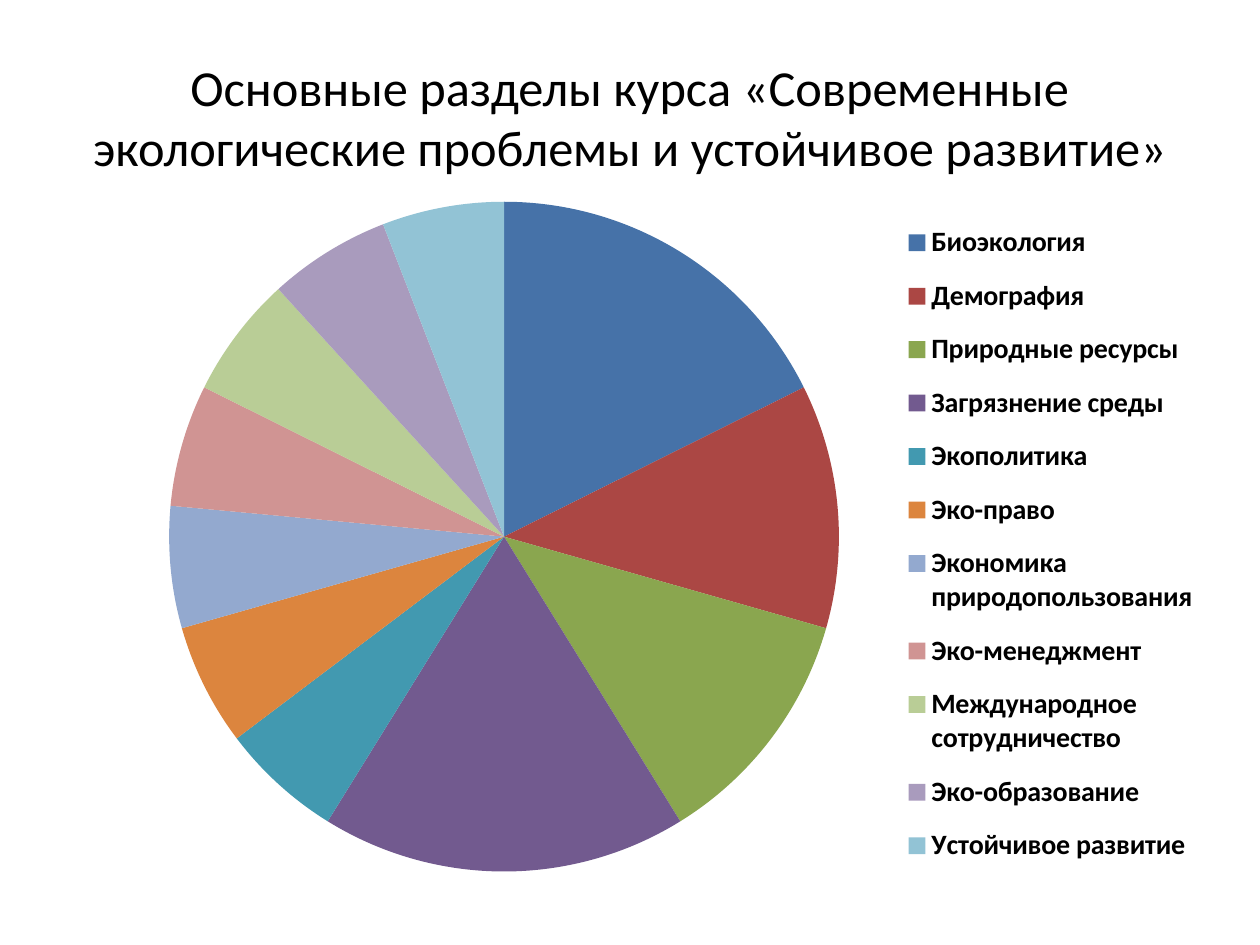
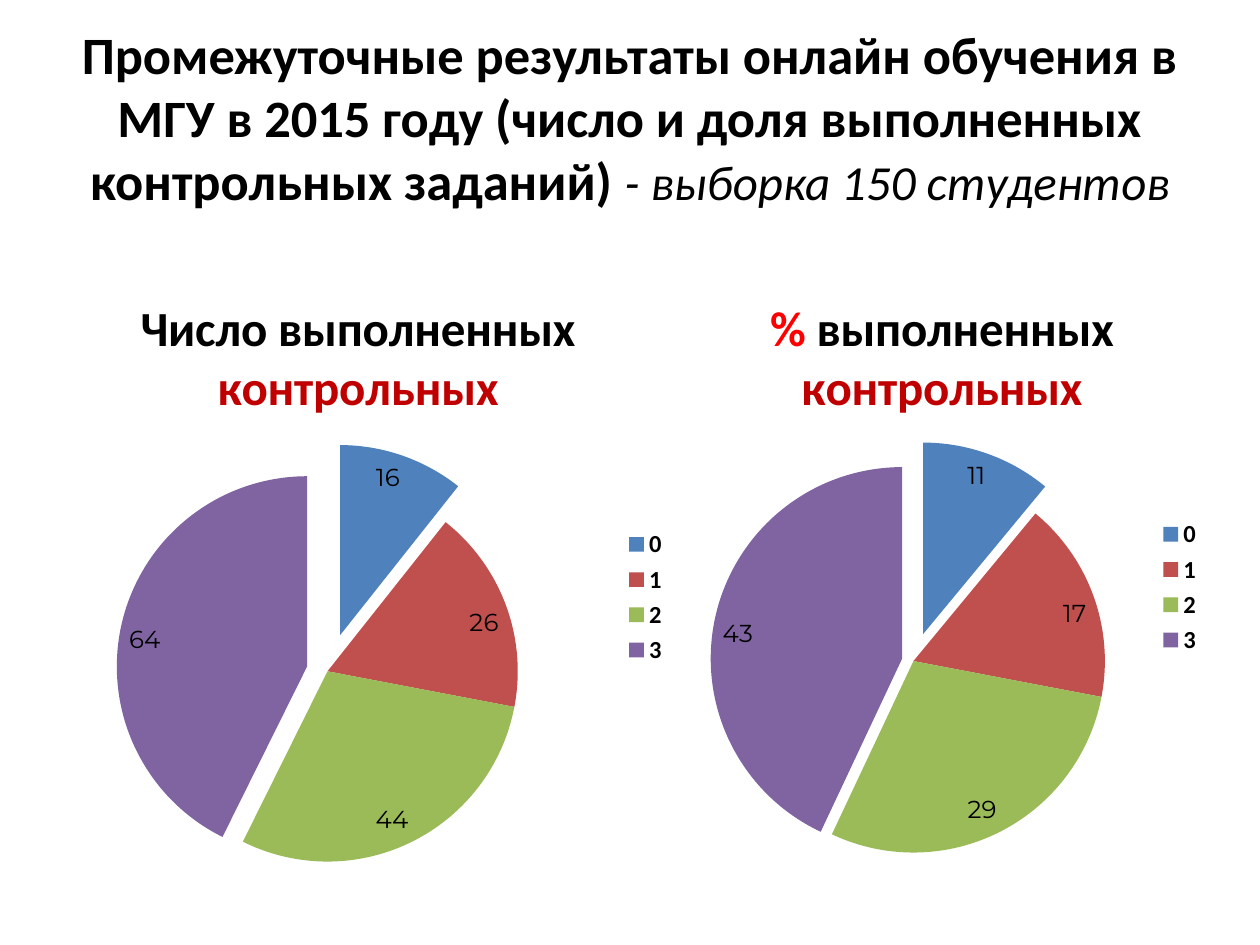
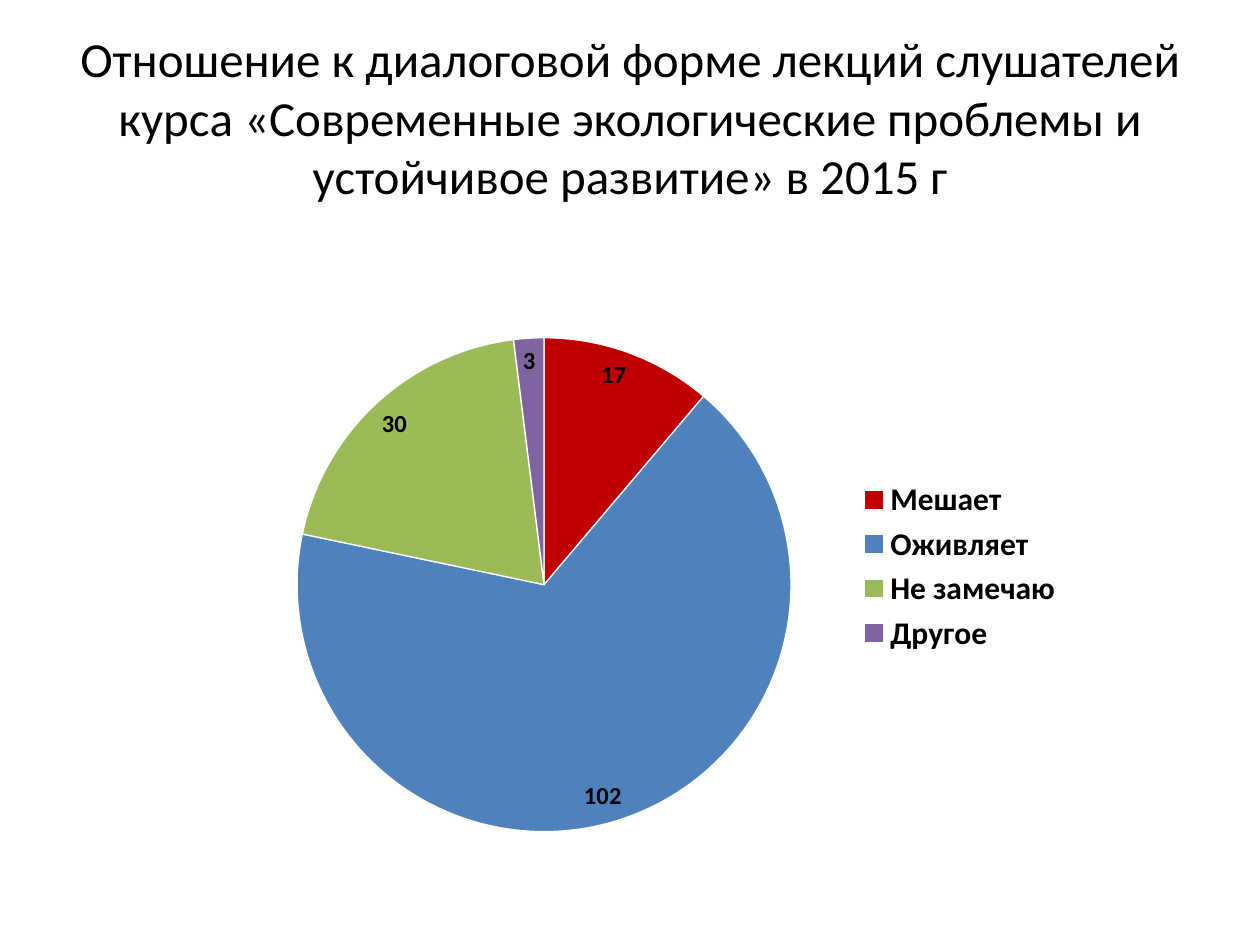
from lxml.etree import SubElement
from pptx import Presentation
from pptx.chart.data import CategoryChartData
from pptx.dml.color import RGBColor
from pptx.enum.chart import XL_CHART_TYPE, XL_LABEL_POSITION, XL_LEGEND_POSITION
from pptx.enum.text import MSO_ANCHOR, PP_ALIGN
from pptx.oxml.ns import qn
from pptx.util import Inches, Pt

HEX = {
    "black": "000000", "white": "FFFFFF", "red": "FF0000", "crimson": "C00000",
    "blue": "4F81BD", "brick": "C0504D", "green": "9BBB59", "violet": "8064A2",
}
WHEEL = ["4672A8", "AB4744", "8AA64F", "725A8F", "4299B0", "DC853E",
         "93A9CF", "D09493", "B9CD96", "A99BBD", "92C3D5"]
BASE = [HEX[n] for n in ("blue", "brick", "green", "violet")]
BODY, DIGIT = "Calibri", "Montserrat"
WIDE, HIGH = 10, 7.5
TITLE = (0.5, 0.3, 9, 1.25)

# Boxes are (left, top, width, height); hubs and radii are in slide inches.
TASKS = dict(cats=["0", "1", "2", "3"], hues=BASE, key=14,
             tag=dict(size=14, face=DIGIT))
SLIDES = [
    {
        "title": [("Основные разделы курса «Современные экологические проблемы "
                   "и устойчивое развитие»", dict(size=28.8))],
        "pies": [dict(
            box=(0.75, 1.47, 8.98, 5.59), hub=(4, 4.26), radius=2.66,
            cats=["Биоэкология", "Демография", "Природные ресурсы",
                  "Загрязнение среды", "Экополитика", "Эко-право",
                  "Экономика природопользования", "Эко-менеджмент",
                  "Международное сотрудничество", "Эко-образование",
                  "Устойчивое развитие"],
            vals=[18, 12, 12, 18] + [6] * 7, hues=WHEEL, key=16,
            frame=(0.7, 0.03, 0.29, 0.96))],
    },
    {
        "title": [("Промежуточные результаты онлайн обучения в МГУ в 2015 году "
                   "(число и доля выполненных контрольных заданий) ",
                   dict(size=30, bold=True)),
                  ("- выборка 150 студентов", dict(size=28, italic=True))],
        "pies": [
            dict(TASKS, box=(5.31, 2.18, 4.33, 4.96), hub=(7.25, 5.25), radius=1.52,
                 vals=[11, 17, 29, 43], burst={0: 15, 3: 6},
                 head=[("%", "red"), (" выполненных ", "black"),
                       ("контрольных", "crimson")]),
            dict(TASKS, box=(0.28, 2.18, 5.12, 5.12), hub=(2.6, 5.33), radius=1.51,
                 vals=[16, 26, 44, 64], burst={0: 20, 3: 11},
                 name="Число выполненных контрольных",
                 head=[("Число выполненных ", "black"), ("контрольных", "crimson")]),
        ],
    },
    {
        "title": [("Отношение к диалоговой форме лекций слушателей курса "
                   "«Современные экологические проблемы и устойчивое развитие» "
                   "в 2015 г", dict(size=28))],
        "pies": [dict(
            box=(1.85, 2.25, 6.69, 4.49), hub=(4.32, 4.64), radius=1.96,
            cats=["Мешает", "Оживляет", "Не замечаю", "Другое"],
            vals=[17, 102, 30, 3],
            hues=[HEX["crimson"], HEX["blue"], HEX["green"], HEX["violet"]],
            key=18, tag=dict(size=14, bold=True), edge=True)],
    },
]


def style(font, size=10, face=BODY, hue="black", bold=False, italic=False):
    font.size, font.name = Pt(size), face
    font.bold, font.italic = bold, italic
    font.color.rgb = RGBColor.from_string(HEX[hue])


def write(para, text, **form):
    run = para.add_run()
    run.text = text
    style(run.font, **form)


def place(part, frame, inner=False):
    """Give a chart part a manual layout, in shares of the chart."""
    old = part.find(qn("c:layout"))
    if old is not None:
        part.remove(old)
    outer = SubElement(part, qn("c:layout"))
    manual = SubElement(outer, qn("c:manualLayout"))
    rows = [("layoutTarget", "inner")] if inner else []
    rows += [("xMode", "edge"), ("yMode", "edge"), *zip("xywh", frame)]
    for tag, val in rows:
        SubElement(manual, qn("c:" + tag)).set("val", str(val))
    side = part.find(qn("c:legendPos"))
    if side is None:
        part.insert(0, outer)
    else:
        side.addnext(outer)


def pie_frame(box, hub, radius):
    """Turn a hub and radius in inches into shares of the chart box."""
    left, top, wide, high = box
    return [round(share, 3) for share in (
        (hub[0] - radius - left) / wide, (hub[1] - radius - top) / high,
        2 * radius / wide, 2 * radius / high)]


def paint(series, hues, edge):
    for i, hue in enumerate(hues):
        form = series.points[i].format
        form.fill.solid()
        form.fill.fore_color.rgb = RGBColor.from_string(hue)
        if edge:
            form.line.color.rgb = RGBColor.from_string(HEX["white"])
            form.line.width = Pt(0.75)
        else:
            form.line.fill.background()


def pull(root, burst):
    """Move the listed slices outward by a percentage of the radius."""
    for point in root.iter(qn("c:dPt")):
        share = burst.get(int(point.find(qn("c:idx")).get("val")))
        if share:
            push = SubElement(point, qn("c:explosion"))
            push.set("val", str(share))
            point.find(qn("c:spPr")).addprevious(push)


def add_pie(slide, box, hub, radius, cats, vals, hues, key, name="Series 1",
            head=(), tag=None, burst=None, edge=False, frame=None):
    data = CategoryChartData(number_format="0")
    data.categories = cats
    data.add_series(name, vals)
    chart = slide.shapes.add_chart(
        XL_CHART_TYPE.PIE, *map(Inches, box), data).chart
    style(chart.font)
    chart.has_title = bool(head)
    if head:
        para = chart.chart_title.text_frame.paragraphs[0]
        for text, hue in head:
            write(para, text, size=28, hue=hue, bold=True)

    chart.has_legend = True
    legend = chart.legend
    legend.position = XL_LEGEND_POSITION.RIGHT
    legend.include_in_layout = False
    style(legend.font, size=key, bold=True)

    plot = chart.plots[0]
    plot.vary_by_categories = True
    paint(plot.series[0], hues, edge)
    if tag:
        plot.has_data_labels = True
        labels = plot.data_labels
        labels.show_value = True
        labels.show_percentage = False
        labels.number_format, labels.number_format_is_linked = "0", False
        labels.position = XL_LABEL_POSITION.INSIDE_END
        style(labels.font, **tag)

    root = chart.element
    pull(root, burst or {})
    place(root.find(".//" + qn("c:plotArea")),
          pie_frame(box, hub, radius), inner=True)
    if frame:
        place(root.find(".//" + qn("c:legend")), frame)


def add_title(slide, runs):
    shape = slide.shapes.title
    shape.left, shape.top, shape.width, shape.height = map(Inches, TITLE)
    text = shape.text_frame
    text.word_wrap, text.vertical_anchor = True, MSO_ANCHOR.MIDDLE
    para = text.paragraphs[0]
    para.alignment = PP_ALIGN.CENTER
    for words, form in runs:
        write(para, words, **form)


def main():
    deck = Presentation()
    deck.slide_width, deck.slide_height = Inches(WIDE), Inches(HIGH)
    for item in SLIDES:
        slide = deck.slides.add_slide(deck.slide_layouts[5])
        add_title(slide, item["title"])
        for pie in item["pies"]:
            add_pie(slide, **pie)
    deck.save("out.pptx")


if __name__ == "__main__":
    main()
